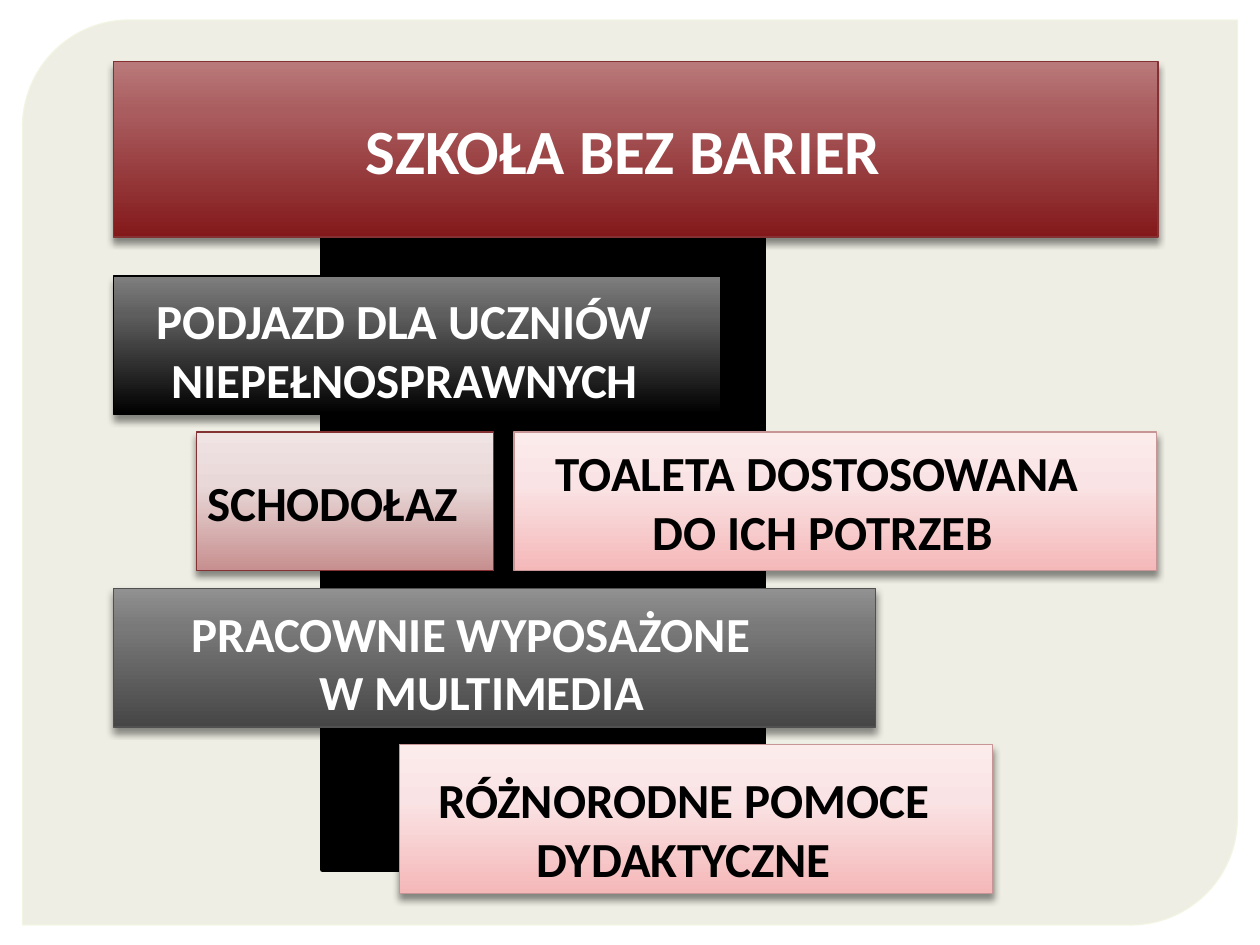
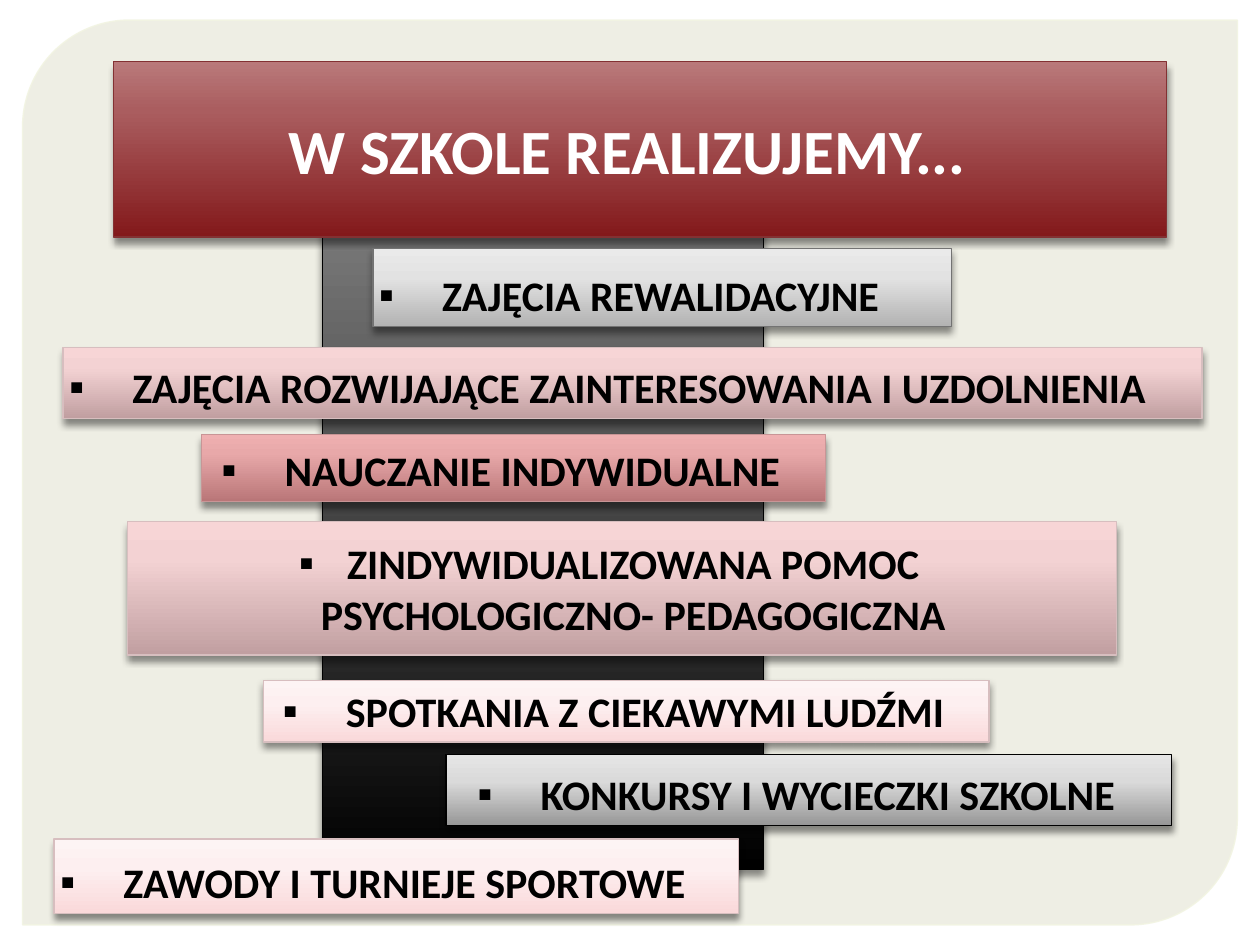
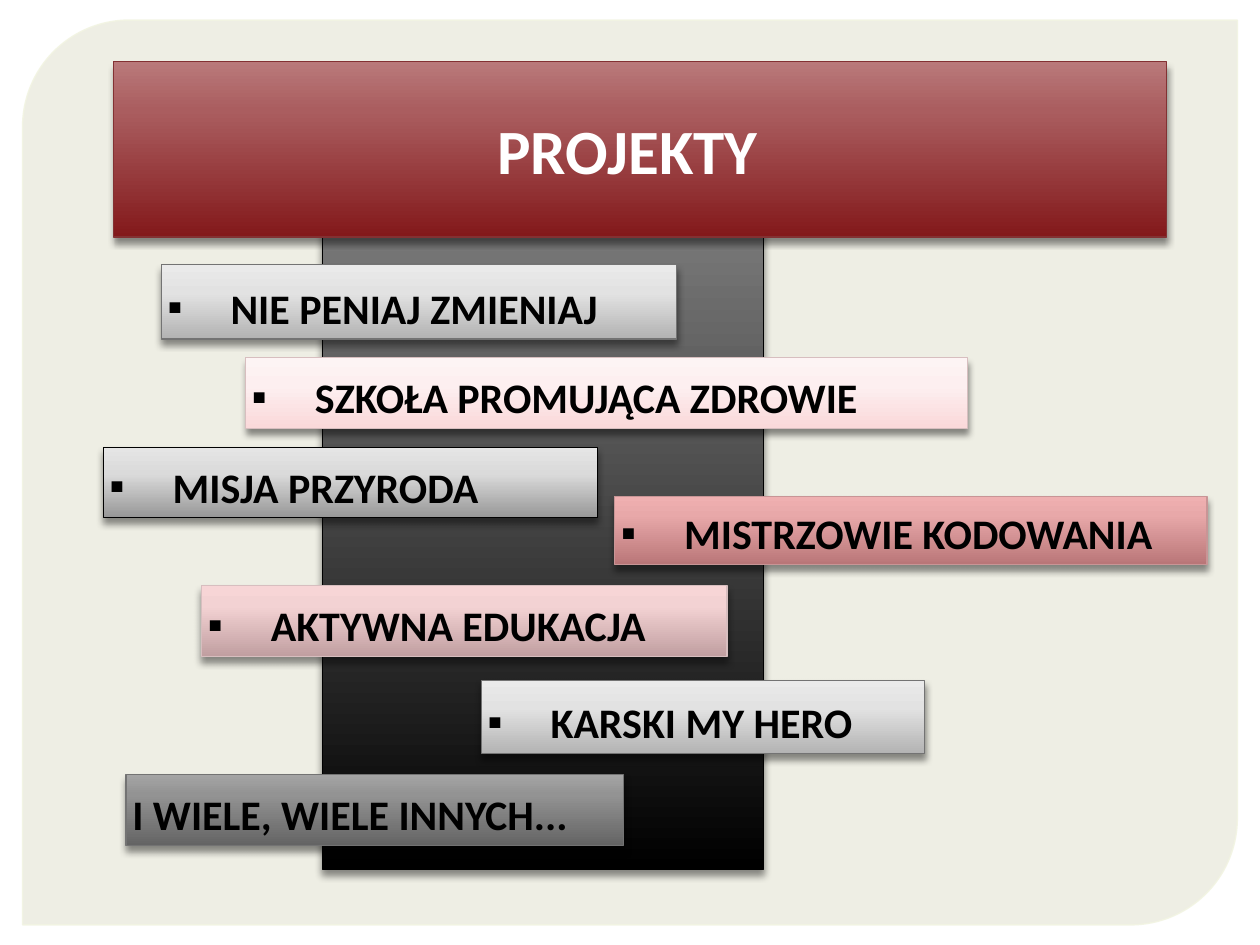
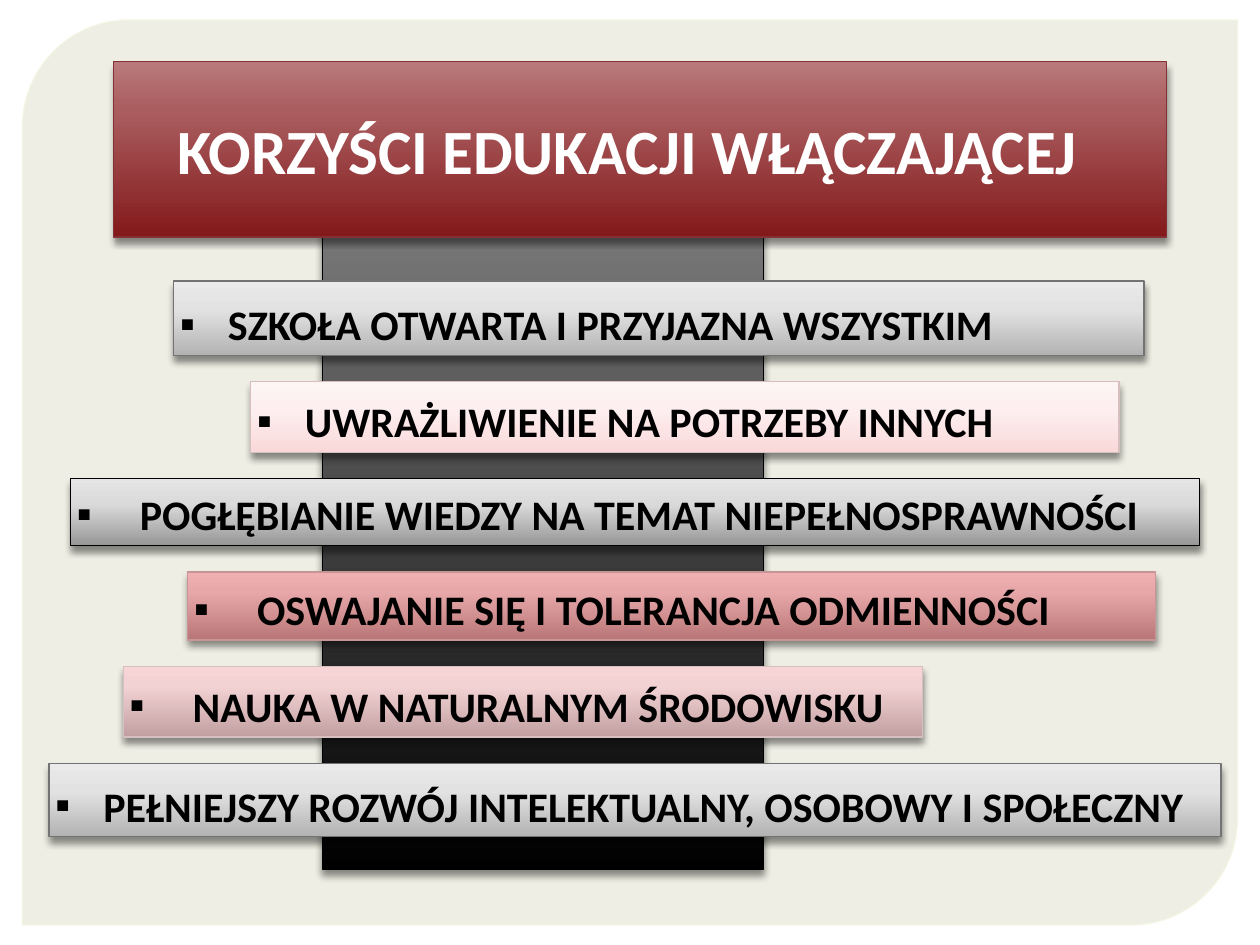
from dataclasses import dataclass, replace

from lxml.etree import SubElement
from pptx import Presentation
from pptx.dml.color import RGBColor
from pptx.enum.shapes import MSO_SHAPE
from pptx.enum.text import MSO_ANCHOR as Anchor, PP_ALIGN as Align
from pptx.oxml.ns import qn
from pptx.util import Inches, Pt

FONT = "Calibri"
BULLET = "▪"
COLS, ROWS = 100, 75
WIDTH, HEIGHT = Inches(10), Inches(7.5)
WIDE, TIGHT = 5, 3.8


@dataclass(frozen=True)
class Skin:
    low: str
    mid: str
    high: str
    mid_at: int
    line: str
    ink: str = "000000"


WINE = Skin("83191B", "AA5D5F", "B9797A", 72, "833133", "FFFFFF")
BLACK = Skin("000000", "5E5E5E", "7F7F7F", 72, "000000", "FFFFFF")
GRAPHITE = Skin("464646", "797979", "919191", 72, "515151", "FFFFFF")
ASH = Skin("646464", "939393", "A4A4A4", 72, "737373")
STEEL = Skin("979797", "DADADA", "E5E5E5", 62, "000000")
SILVER = Skin("B3B3B3", "E2E2E2", "EAEAEA", 62, "737373")
DUSK = Skin("C78F8F", "E9D8D8", "EFE3E3", 62, "833133")
ROSE = Skin("F5B8B9", "FAE3E4", "FBEBEB", 62, "C89596")
CORAL = Skin("B97678", "E8A8A9", "EFB0B1", 72, "C89596")
MAUVE = Skin("C19FA1", "F3D2D3", "F7D5D6", 72, "D7BEBF")
BLUSH = Skin("FAD9DA", "FDEFF0", "FDF4F4", 62, "D7BEBF")


@dataclass(frozen=True)
class Bar:
    col: float
    row: float
    cols: float
    rows: float
    skin: Skin
    text: str = ""
    indent: float = WIDE
    align: Align = Align.LEFT
    anchor: Anchor = Anchor.BOTTOM
    size: int = 24


@dataclass(frozen=True)
class Page:
    title: str
    bars: list[Bar]
    title_cols: float = 83.6
    flat_pillar: bool = False


def x(cols: float) -> int:
    return round(WIDTH * cols / COLS)


def y(rows: float) -> int:
    return round(HEIGHT * rows / ROWS)


def rgb(color: str) -> RGBColor:
    return RGBColor.from_string(color)


def set_alpha(fill_xml, percent: int) -> None:
    SubElement(fill_xml.find(qn("a:srgbClr")), qn("a:alpha"), val=str(percent * 1000))


def add_box(s, col: float, row: float, cols: float, rows: float,
            kind=MSO_SHAPE.RECTANGLE, line: str = "000000", weight: float = 0.75):
    sp = s.shapes.add_shape(kind, x(col), y(row), x(cols), y(rows))
    sp.shadow.inherit = False
    sp.line.color.rgb = rgb(line)
    sp.line.width = Pt(weight)
    return sp


def add_gradient(sp, skin: Skin) -> None:
    sp.fill.gradient()
    sp.fill.gradient_angle = 90
    stops = sp._element.spPr.find(qn("a:gradFill")).find(qn("a:gsLst"))
    for old in list(stops):
        stops.remove(old)
    for at, color in ((0, skin.low), (skin.mid_at, skin.mid), (100, skin.high)):
        stop = SubElement(stops, qn("a:gs"), pos=str(at * 1000))
        SubElement(stop, qn("a:srgbClr"), val=color)


def add_shadow(sp) -> None:
    effects = sp._element.spPr.find(qn("a:effectLst"))
    shadow = SubElement(effects, qn("a:outerShdw"), blurRad=str(Pt(4)), dist=str(Pt(3)),
                        dir=str(90 * 60000), algn="ctr", rotWithShape="0")
    SubElement(shadow, qn("a:srgbClr"), val="000000")
    set_alpha(shadow, 43)


def add_bullet(p, indent: float) -> None:
    pPr = p._p.get_or_add_pPr()
    pPr.set("marL", str(x(indent)))
    pPr.set("indent", str(-x(indent)))
    SubElement(pPr, qn("a:buFont"), typeface=FONT)
    SubElement(pPr, qn("a:buChar"), char=BULLET)


def write(sp, text: str, *, size: int, ink: str, align: Align, anchor: Anchor,
          indent: float) -> None:
    tf = sp.text_frame
    tf.word_wrap = True
    tf.vertical_anchor = anchor
    tf.margin_left = tf.margin_top = tf.margin_bottom = Inches(0.05)
    tf.margin_right = Inches(0.25)
    p = tf.paragraphs[0]
    p.alignment = align
    if indent:
        add_bullet(p, indent)
    for i, part in enumerate(text.split("\n")):
        if i:
            p.add_line_break()
        r = p.add_run()
        r.text = part
        r.font.name, r.font.size, r.font.bold = FONT, Pt(size), True
        r.font.color.rgb = rgb(ink)


def draw_bar(s, bar: Bar) -> None:
    sp = add_box(s, bar.col, bar.row, bar.cols, bar.rows, line=bar.skin.line)
    add_gradient(sp, bar.skin)
    add_shadow(sp)
    if bar.text:
        write(sp, bar.text, size=bar.size, ink=bar.skin.ink, align=bar.align,
              anchor=bar.anchor, indent=bar.indent)


def draw_pillar(s, flat: bool) -> None:
    place = (25.6, 15.2, 35, 53.8)
    if flat:
        sp = add_box(s, *place, weight=3)
        sp.fill.solid()
        sp.fill.fore_color.rgb = rgb("000000")
    else:
        draw_bar(s, Bar(*place, BLACK))


def move_panel_to_layout(s, layout) -> None:
    sp = add_box(s, 1.8, 1.6, 96.4, 71.8, MSO_SHAPE.ROUND_2_DIAG_RECTANGLE,
                 line="F2F4E2", weight=0.87)
    sp.adjustments[0], sp.adjustments[1] = 0.118, 0
    sp.fill.solid()
    sp.fill.fore_color.rgb = rgb("E5E6D7")
    spPr = sp._element.spPr
    set_alpha(spPr.find(qn("a:solidFill")), 65)
    set_alpha(spPr.find(qn("a:ln")).find(qn("a:solidFill")), 88)
    layout.shapes._spTree.insert(2, sp._element)


def draw_page(s, page: Page) -> None:
    draw_pillar(s, page.flat_pillar)
    draw_bar(s, Bar(9, 4.9, page.title_cols, 13.9, WINE, page.title, indent=0,
                    align=Align.CENTER, anchor=Anchor.MIDDLE, size=36))
    for bar in page.bars:
        draw_bar(s, bar)


def facility(col: float, step: int, cols: float, skin: Skin, text: str,
             anchor: Anchor = Anchor.BOTTOM, rows: float = 11) -> Bar:
    return Bar(col, 21.9 + 12.4 * step, cols, rows, skin, text, indent=0,
               align=Align.CENTER, anchor=anchor, size=28)


def stack(top: float, gap: float, bars: list[Bar]) -> list[Bar]:
    placed = []
    for bar in bars:
        placed.append(replace(bar, row=top))
        top += bar.rows + gap
    return placed


PAGES = [
    Page("SZKOŁA BEZ BARIER", [
        facility(9, 0, 48.2, BLACK, "PODJAZD DLA UCZNIÓW NIEPEŁNOSPRAWNYCH"),
        facility(15.6, 1, 23.6, DUSK, "SCHODOŁAZ", Anchor.MIDDLE),
        facility(40.8, 1, 51, ROSE, "TOALETA DOSTOSOWANA \nDO ICH POTRZEB", Anchor.MIDDLE),
        facility(9, 2, 60.5, GRAPHITE, "PRACOWNIE WYPOSAŻONE  \nW MULTIMEDIA"),
        facility(31.7, 3, 47.1, ROSE, "RÓŻNORODNE POMOCE DYDAKTYCZNE", rows=11.8),
    ], title_cols=82.9, flat_pillar=True),
    Page("W SZKOLE REALIZUJEMY...", [
        Bar(29.6, 19.7, 45.9, 6.2, SILVER, "ZAJĘCIA REWALIDACYJNE"),
        Bar(5, 27.6, 90.4, 5.6, MAUVE, "ZAJĘCIA ROZWIJAJĄCE ZAINTERESOWANIA I UZDOLNIENIA"),
        Bar(16, 34.5, 49.5, 5.3, CORAL, "NAUCZANIE INDYWIDUALNE", align=Align.CENTER),
        Bar(10.1, 41.4, 78.5, 10.6, MAUVE,
            "ZINDYWIDUALIZOWANA POMOC PSYCHOLOGICZNO- PEDAGOGICZNA",
            TIGHT, Align.CENTER, Anchor.MIDDLE),
        Bar(20.9, 54, 57.6, 4.9, BLUSH, "SPOTKANIA Z CIEKAWYMI LUDŹMI", align=Align.CENTER),
        Bar(35.4, 59.9, 57.6, 5.6, STEEL, "KONKURSY I WYCIECZKI SZKOLNE", align=Align.CENTER),
        Bar(4.3, 66.6, 54.3, 5.9, BLUSH, "ZAWODY I TURNIEJE SPORTOWE"),
    ]),
    Page("PROJEKTY", [
        Bar(12.8, 21, 40.9, 5.9, SILVER, "NIE PENIAJ ZMIENIAJ"),
        Bar(19.5, 28.4, 57.3, 5.6, BLUSH, "SZKOŁA PROMUJĄCA ZDROWIE"),
        Bar(8.2, 35.5, 39.2, 5.6, STEEL, "MISJA PRZYRODA"),
        Bar(48.8, 39.4, 47, 5.4, CORAL, "MISTRZOWIE KODOWANIA"),
        Bar(16, 46.5, 41.7, 5.6, MAUVE, "AKTYWNA EDUKACJA"),
        Bar(38.2, 54, 35.2, 5.8, SILVER, "KARSKI MY HERO"),
        Bar(10, 61.5, 39.5, 5.6, ASH, "I WIELE, WIELE INNYCH...", indent=0),
    ]),
    Page("KORZYŚCI EDUKACJI WŁĄCZAJĄCEJ", stack(22.3, 2.1, [
        Bar(13.8, 0, 77, 5.9, SILVER, "SZKOŁA OTWARTA I PRZYJAZNA WSZYSTKIM", TIGHT),
        Bar(19.9, 0, 68.9, 5.6, BLUSH, "UWRAŻLIWIENIE NA POTRZEBY INNYCH", TIGHT),
        Bar(5.6, 0, 89.6, 5.3, STEEL, "POGŁĘBIANIE WIEDZY NA TEMAT NIEPEŁNOSPRAWNOŚCI"),
        Bar(14.9, 0, 76.8, 5.4, CORAL, "OSWAJANIE SIĘ I TOLERANCJA ODMIENNOŚCI"),
        Bar(9.8, 0, 63.4, 5.6, MAUVE, "NAUKA W NATURALNYM ŚRODOWISKU"),
        Bar(3.9, 0, 93, 5.8, SILVER, "PEŁNIEJSZY ROZWÓJ INTELEKTUALNY, OSOBOWY I SPOŁECZNY",
            TIGHT),
    ])),
]


def main() -> None:
    prs = Presentation()
    prs.slide_width, prs.slide_height = WIDTH, HEIGHT
    blank = prs.slide_layouts[6]
    for i, page in enumerate(PAGES):
        s = prs.slides.add_slide(blank)
        if i == 0:
            move_panel_to_layout(s, blank)
        draw_page(s, page)
    prs.save("out.pptx")


if __name__ == "__main__":
    main()
